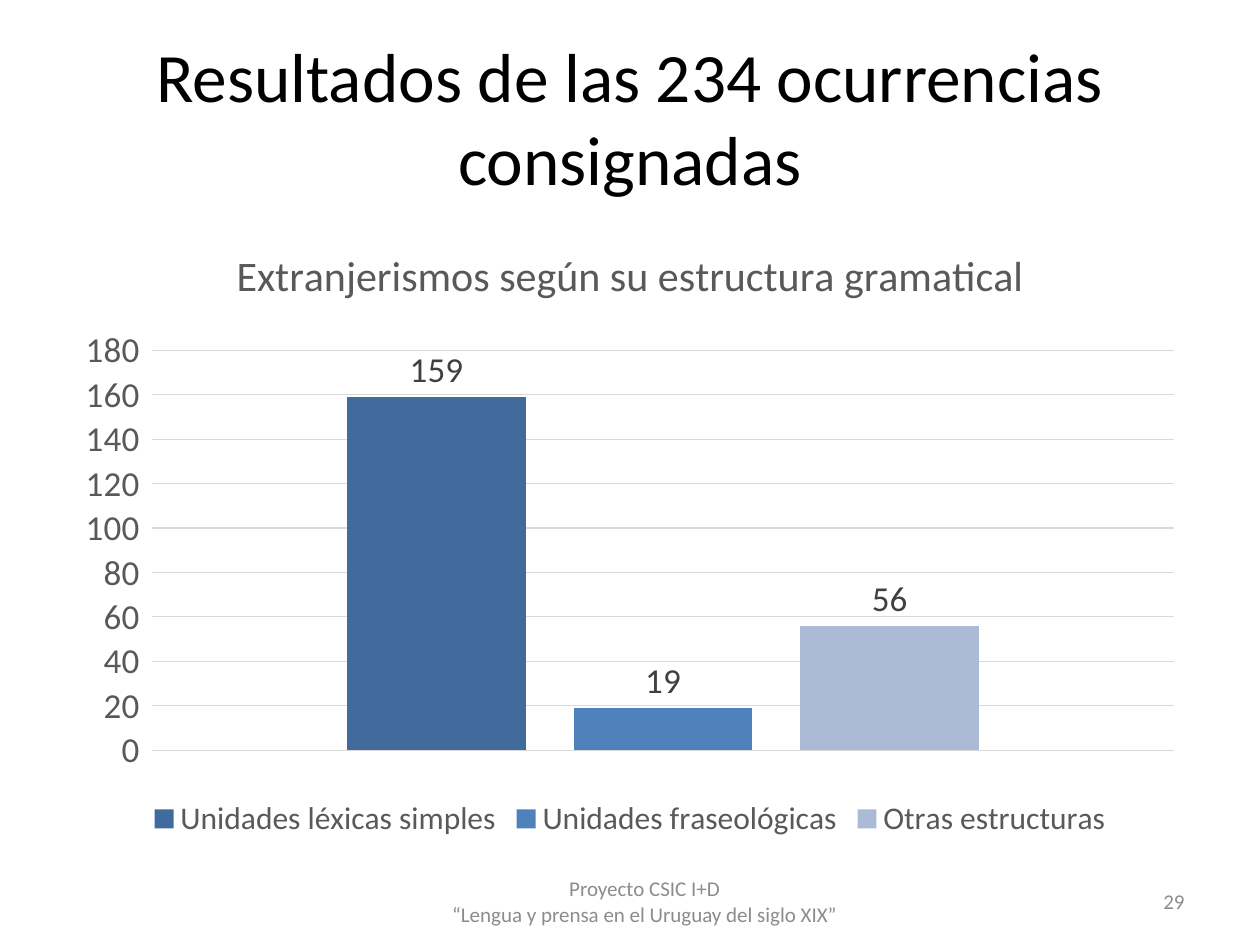
from pptx import Presentation
from pptx.chart.data import CategoryChartData
from pptx.dml.color import RGBColor
from pptx.enum.chart import XL_CHART_TYPE, XL_LABEL_POSITION, XL_LEGEND_POSITION, XL_TICK_MARK
from pptx.enum.text import MSO_ANCHOR, PP_ALIGN
from pptx.util import Cm, Pt

FONT = "Calibri"
COLORS = {"title": "000000", "chart": "595959", "label": "404040",
          "grid": "D9D9D9", "footer": "8C8C8C"}
TITLE = "Resultados de las 234 ocurrencias consignadas"
CHART_TITLE = "Extranjerismos según su estructura gramatical"
SERIES = [
    ("Unidades léxicas simples", 159, "426B9D"),
    ("Unidades fraseológicas", 19, "4F81BD"),
    ("Otras estructuras", 56, "AABAD7"),
]
FOOTERS = [
    ("Proyecto CSIC I+D\v“Lengua y prensa en el Uruguay del siglo XIX”", 8.69, 8.61, PP_ALIGN.CENTER),
    ("29", 18.21, 5.92, PP_ALIGN.RIGHT),
]


def rgb(name):
    return RGBColor.from_string(COLORS[name])


def set_font(font, size, color):
    font.name = FONT
    font.size = Pt(size)
    font.bold = False
    font.color.rgb = rgb(color)


def write(sp, text, size, color, align):
    tf = sp.text_frame
    tf.word_wrap = True
    tf.vertical_anchor = MSO_ANCHOR.MIDDLE
    p = tf.paragraphs[0]
    p.text = text
    p.alignment = align
    set_font(p.font, size, color)


def add_column_chart(s):
    data = CategoryChartData()
    data.categories = ["1"]
    for name, value, _ in SERIES:
        data.add_series(name, [value])
    chart = s.shapes.add_chart(XL_CHART_TYPE.COLUMN_CLUSTERED, Cm(1.27), Cm(4.45),
                               Cm(22.86), Cm(12.57), data).chart
    set_font(chart.font, 20, "chart")

    chart.has_title = True
    p = chart.chart_title.text_frame.paragraphs[0]
    p.text = CHART_TITLE
    set_font(p.font, 24, "chart")
    chart.chart_title.include_in_layout = False

    chart.has_legend = True
    chart.legend.position = XL_LEGEND_POSITION.BOTTOM
    chart.legend.include_in_layout = False
    set_font(chart.legend.font, 18, "chart")

    chart.category_axis.visible = False
    axis = chart.value_axis
    axis.major_tick_mark = XL_TICK_MARK.OUTSIDE
    axis.minor_tick_mark = XL_TICK_MARK.NONE
    axis.format.line.fill.background()
    axis.major_gridlines.format.line.color.rgb = rgb("grid")
    axis.major_gridlines.format.line.width = Pt(0.75)
    set_font(axis.tick_labels.font, 20, "chart")

    plot = chart.plots[0]
    plot.gap_width = 219
    plot.overlap = -27
    plot.vary_by_categories = False
    for series, (_, _, color) in zip(plot.series, SERIES):
        series.format.fill.solid()
        series.format.fill.fore_color.rgb = RGBColor.from_string(color)
        labels = series.data_labels
        labels.show_value = True
        labels.position = XL_LABEL_POSITION.OUTSIDE_END
        set_font(labels.font, 20, "label")


def main():
    prs = Presentation()
    prs.slide_width, prs.slide_height = Cm(25.4), Cm(19.05)
    s = prs.slides.add_slide(prs.slide_layouts[5])

    title = s.shapes.title
    title.left, title.top, title.width, title.height = Cm(1.27), Cm(0.76), Cm(22.86), Cm(3.18)
    write(title, TITLE, 39.6, "title", PP_ALIGN.CENTER)

    add_column_chart(s)
    for text, left, width, align in FOOTERS:
        sp = s.shapes.add_textbox(Cm(left), Cm(17.66), Cm(width), Cm(1.01))
        write(sp, text, 12, "footer", align)
    prs.save("out.pptx")


if __name__ == "__main__":
    main()
